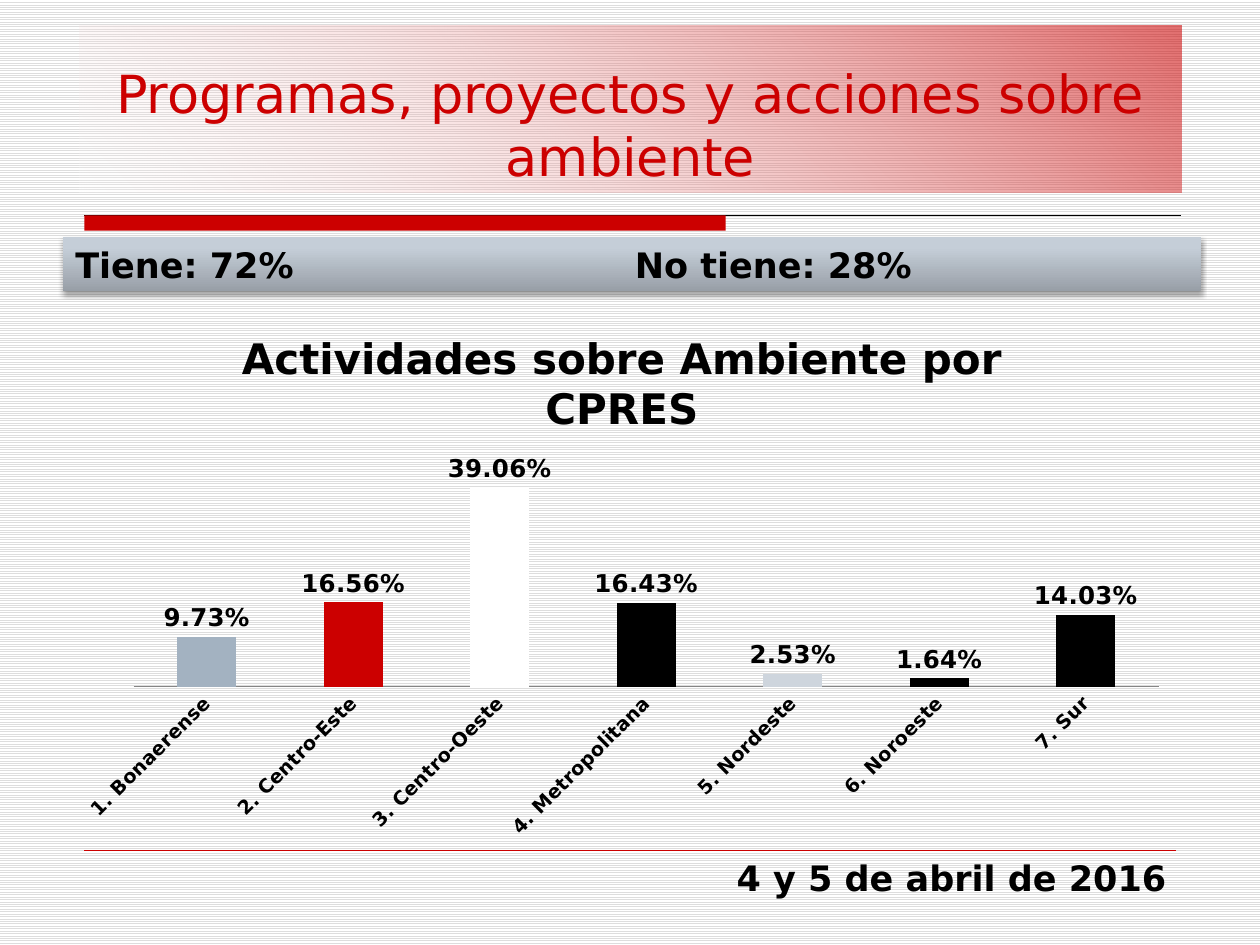
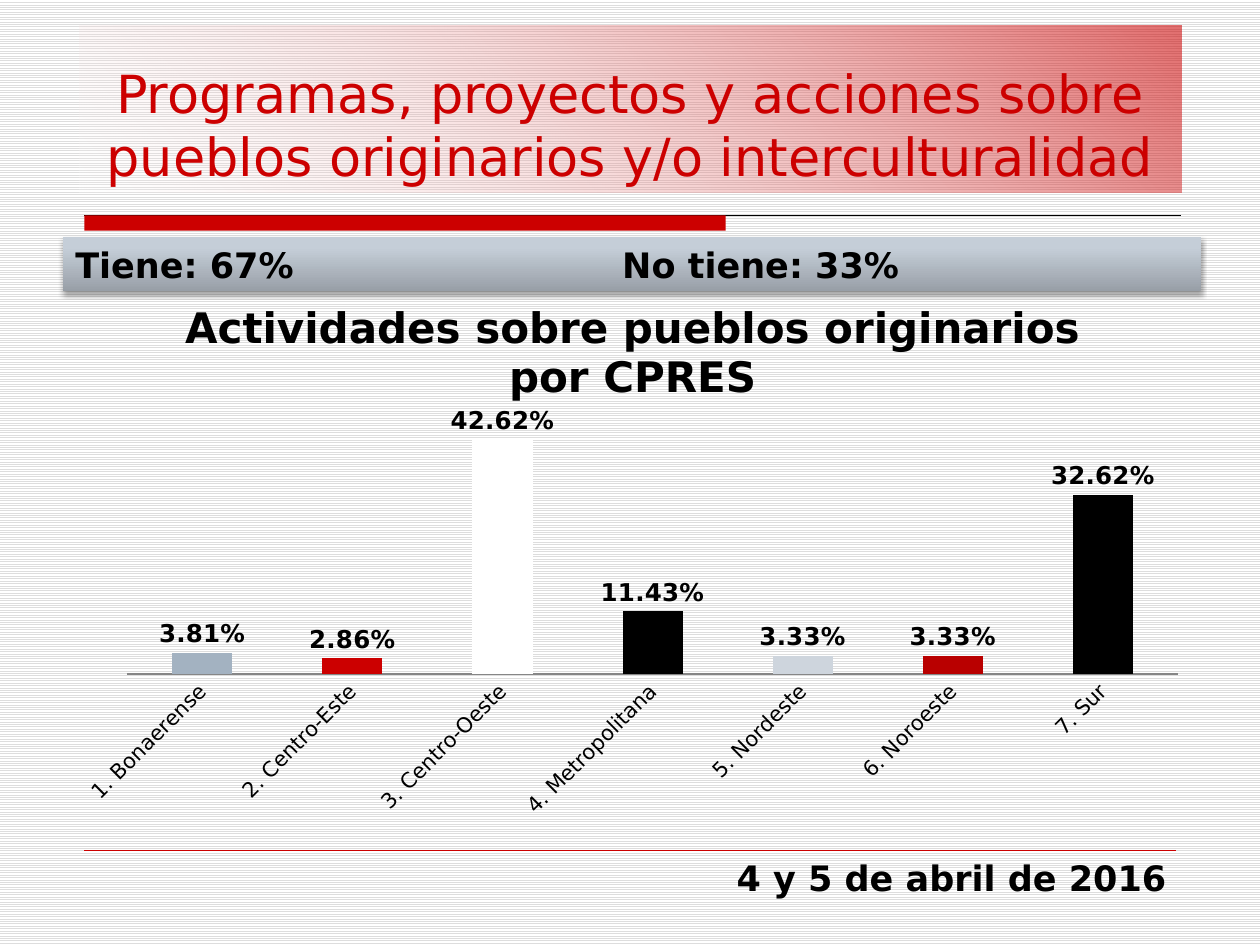
from dataclasses import dataclass

from lxml import etree
from pptx import Presentation
from pptx.chart.data import CategoryChartData
from pptx.dml.color import RGBColor
from pptx.enum.chart import XL_CHART_TYPE, XL_LABEL_POSITION, XL_TICK_LABEL_POSITION, XL_TICK_MARK
from pptx.enum.dml import MSO_PATTERN
from pptx.enum.shapes import MSO_CONNECTOR, MSO_SHAPE
from pptx.enum.text import MSO_ANCHOR, PP_ALIGN
from pptx.oxml.ns import qn
from pptx.util import Inches, Pt

RECTANGLE = MSO_SHAPE.RECTANGLE
STRAIGHT = MSO_CONNECTOR.STRAIGHT
COLUMNS = XL_CHART_TYPE.COLUMN_CLUSTERED
OUTSIDE_END = XL_LABEL_POSITION.OUTSIDE_END
NEXT_TO_AXIS = XL_TICK_LABEL_POSITION.NEXT_TO_AXIS
NO_TICKS = XL_TICK_MARK.NONE
STRIPES = MSO_PATTERN.LIGHT_HORIZONTAL
TOP, BOTTOM = MSO_ANCHOR.TOP, MSO_ANCHOR.BOTTOM
LEFT, CENTER, RIGHT = PP_ALIGN.LEFT, PP_ALIGN.CENTER, PP_ALIGN.RIGHT


@dataclass(frozen=True)
class Theme:
    font: str = "DejaVu Sans"
    red: str = "CC0000"
    dark_red: str = "B90000"
    black: str = "000000"
    white: str = "FFFFFF"
    stripe: str = "DDDDDD"
    steel: str = "A3B2C1"
    pale_steel: str = "CED5DD"
    axis: str = "868686"
    title_size: int = 30
    body_size: int = 20
    chart_title_size: int = 24
    data_label_size: int = 14
    chart_size: int = 10


THEME = Theme()
# Gradient stops: position, colour, opacity (all in percent)
TITLE_STOPS = [(0, THEME.white, 16), (100, THEME.red, 57)]
SUMMARY_STOPS = [(0, "989FA7", 100), (80, "C5CED8", 100), (100, "C6CFDA", 100)]

REGIONS = ["1. Bonaerense", "2. Centro-Este", "3. Centro-Oeste", "4. Metropolitana",
           "5. Nordeste", "6. Noroeste", "7. Sur"]
DATE = "4 y 5 de abril de 2016"


def rgb(color):
    return RGBColor.from_string(color)


def style_font(font, size, color=THEME.black, bold=False):
    font.name = THEME.font
    font.size = Pt(size)
    font.bold = bold
    font.color.rgb = rgb(color)


def write_text(text_frame, text, size=THEME.body_size, color=THEME.black, bold=False,
               align=LEFT, anchor=TOP, tab=None):
    text_frame.word_wrap = True
    text_frame.vertical_anchor = anchor
    paragraph = text_frame.paragraphs[0]
    paragraph.alignment = align
    run = paragraph.add_run()
    run.text = text
    style_font(run.font, size, color, bold)
    if tab is not None:
        tabs = etree.SubElement(paragraph._p.get_or_add_pPr(), qn("a:tabLst"))
        etree.SubElement(tabs, qn("a:tab"), pos=str(Inches(tab)), algn="l")


def set_gradient(fill, stops, angle):
    fill.gradient()
    fill.gradient_angle = 360 - angle
    stop_list = fill._xPr.find(".//" + qn("a:gsLst"))
    for stop in list(stop_list):
        stop_list.remove(stop)
    for position, color, opacity in stops:
        stop = etree.SubElement(stop_list, qn("a:gs"), pos=str(position * 1000))
        tint = etree.SubElement(stop, qn("a:srgbClr"), val=color)
        if opacity < 100:
            etree.SubElement(tint, qn("a:alpha"), val=str(opacity * 1000))


def add_shadow(shape):
    effects = shape._element.spPr.find(qn("a:effectLst"))
    shadow = etree.SubElement(effects, qn("a:outerShdw"), blurRad=str(Pt(3.1)),
                              dist=str(Pt(1.8)), dir="5400000", rotWithShape="0")
    color = etree.SubElement(shadow, qn("a:srgbClr"), val=THEME.black)
    etree.SubElement(color, qn("a:alpha"), val="35000")


def place_chart_part(part, index, frame, **inches):
    """Fix a chart title or plot area, in inches from the corner of the chart frame."""
    for old_layout in part.findall(qn("c:layout")):
        part.remove(old_layout)
    layout = etree.Element(qn("c:layout"))
    manual = etree.SubElement(layout, qn("c:manualLayout"))
    if "w" in inches:
        etree.SubElement(manual, qn("c:layoutTarget"), val="inner")
    for axis in "xy":
        etree.SubElement(manual, qn(f"c:{axis}Mode"), val="edge")
    width, height = frame[2:]
    for name, value in inches.items():
        whole = width if name in "xw" else height
        etree.SubElement(manual, qn(f"c:{name}"), val=str(value / whole))
    part.insert(index, layout)


class SlideBuilder:
    def __init__(self, presentation):
        self.presentation = presentation
        self.slide = None

    def new_slide(self):
        self.slide = self.presentation.slides.add_slide(self.presentation.slide_layouts[6])
        fill = self.slide.background.fill
        fill.patterned()
        fill.pattern = STRIPES
        fill.fore_color.rgb = rgb(THEME.stripe)
        fill.back_color.rgb = rgb(THEME.white)

    def rectangle(self, left, top, width, height, color=None, stops=None, angle=0):
        shape = self.slide.shapes.add_shape(RECTANGLE, Inches(left), Inches(top),
                                            Inches(width), Inches(height))
        shape.shadow.inherit = False
        shape.line.fill.background()
        if stops:
            set_gradient(shape.fill, stops, angle)
        else:
            shape.fill.solid()
            shape.fill.fore_color.rgb = rgb(color)
        return shape

    def horizontal_line(self, left, right, top, color, width):
        line = self.slide.shapes.add_connector(STRAIGHT, Inches(left), Inches(top),
                                               Inches(right), Inches(top))
        line.line.color.rgb = rgb(color)
        line.line.width = Pt(width)
        etree.SubElement(line._element.spPr, qn("a:effectLst"))

    def frame(self, title):
        # Rule under the title, with its thick left part
        self.horizontal_line(0.67, 9.37, 1.71, THEME.black, 0.75)
        self.rectangle(0.67, 1.71, 5.09, 0.12, THEME.red)
        # Title band
        band = self.rectangle(0.63, 0.2, 8.75, 1.33, stops=TITLE_STOPS, angle=315)
        write_text(band.text_frame, title, size=THEME.title_size, color=THEME.red,
                   align=CENTER, anchor=BOTTOM)
        # Footer
        self.horizontal_line(0.67, 9.33, 6.75, THEME.red, 0.25)
        box = self.slide.shapes.add_textbox(Inches(0.33), Inches(6.75), Inches(9.03), Inches(0.43))
        write_text(box.text_frame, DATE, bold=True, align=RIGHT)

    def summary(self, with_activities, without_activities, tab):
        bar = self.rectangle(0.5, 1.88, 9.03, 0.43, stops=SUMMARY_STOPS, angle=270)
        add_shadow(bar)
        write_text(bar.text_frame, f"Tiene: {with_activities}\tNo tiene: {without_activities}",
                   bold=True, tab=tab)

    def column_chart(self, title, values, colors, frame, plot, title_place, axis_size, axis_bold):
        data = CategoryChartData(number_format="0.00%")
        data.categories = REGIONS
        data.add_series("Series 1", values)
        chart = self.slide.shapes.add_chart(COLUMNS, *map(Inches, frame), data).chart
        style_font(chart.font, THEME.chart_size)
        chart.has_legend = False

        # Title and plot area
        chart.has_title = True
        text_frame = chart.chart_title.text_frame
        text_frame.text = title
        style_font(text_frame.paragraphs[0].runs[0].font, THEME.chart_title_size, bold=True)
        chart.chart_title.include_in_layout = False
        place_chart_part(chart.chart_title._element, 1, frame, **title_place)
        place_chart_part(chart._chartSpace.chart.plotArea, 0, frame, **plot)

        # Axes
        value_axis = chart.value_axis
        value_axis.minimum_scale, value_axis.maximum_scale = 0, 0.45
        value_axis.has_major_gridlines = False
        value_axis.visible = False
        category_axis = chart.category_axis
        category_axis.major_tick_mark = NO_TICKS
        category_axis.tick_label_position = NEXT_TO_AXIS
        category_axis.format.line.color.rgb = rgb(THEME.axis)
        category_axis.format.line.width = Pt(0.75)
        style_font(category_axis.tick_labels.font, axis_size, bold=axis_bold)
        body = category_axis._element.find(qn("c:txPr")).find(qn("a:bodyPr"))
        body.set("rot", "-2700000")
        body.set("vert", "horz")

        # Columns and their labels
        columns = chart.plots[0]
        columns.gap_width = 150
        columns.vary_by_categories = False
        series = columns.series[0]
        series.invert_if_negative = False
        series.format.fill.solid()
        series.format.fill.fore_color.rgb = rgb(colors[0])
        for index, color in enumerate(colors[1:], start=1):
            fill = series.points[index].format.fill
            fill.solid()
            fill.fore_color.rgb = rgb(color)
        labels = series.data_labels
        labels.show_value = True
        labels.position = OUTSIDE_END
        labels.number_format = "0.00%"
        labels.number_format_is_linked = False
        style_font(labels.font, THEME.data_label_size, bold=True)


def region_colors(northwest):
    return [THEME.steel, THEME.red, THEME.white, THEME.black,
            THEME.pale_steel, northwest, THEME.black]


def main():
    presentation = Presentation()
    presentation.slide_width, presentation.slide_height = Inches(10), Inches(7.5)
    builder = SlideBuilder(presentation)

    # Environment
    builder.new_slide()
    builder.frame("Programas, proyectos y acciones sobre ambiente")
    builder.summary("72%", "28%", tab=4.44)
    builder.column_chart(
        "Actividades sobre Ambiente por CPRES",
        [0.0973, 0.1656, 0.3906, 0.1643, 0.0253, 0.0164, 0.1403],
        region_colors(THEME.black), frame=(0.5, 2.41, 8.86, 4.34),
        plot=dict(x=0.56, y=1.22, w=8.14, h=1.82), title_place=dict(x=1.36, y=0.15),
        axis_size=11, axis_bold=True)

    # Indigenous peoples
    builder.new_slide()
    builder.frame("Programas, proyectos y acciones sobre pueblos originarios y/o interculturalidad")
    builder.summary("67%", "33%", tab=4.34)
    builder.column_chart(
        "Actividades sobre pueblos originarios por CPRES",
        [0.0381, 0.0286, 0.4262, 0.1143, 0.0333, 0.0333, 0.3262],
        region_colors(THEME.dark_red), frame=(0.5, 2.18, 9.03, 4.41),
        plot=dict(x=0.51, y=1.21, w=8.34, h=1.96), title_place=dict(x=0.91, y=0.13),
        axis_size=12, axis_bold=False)

    presentation.save("out.pptx")


if __name__ == "__main__":
    main()
